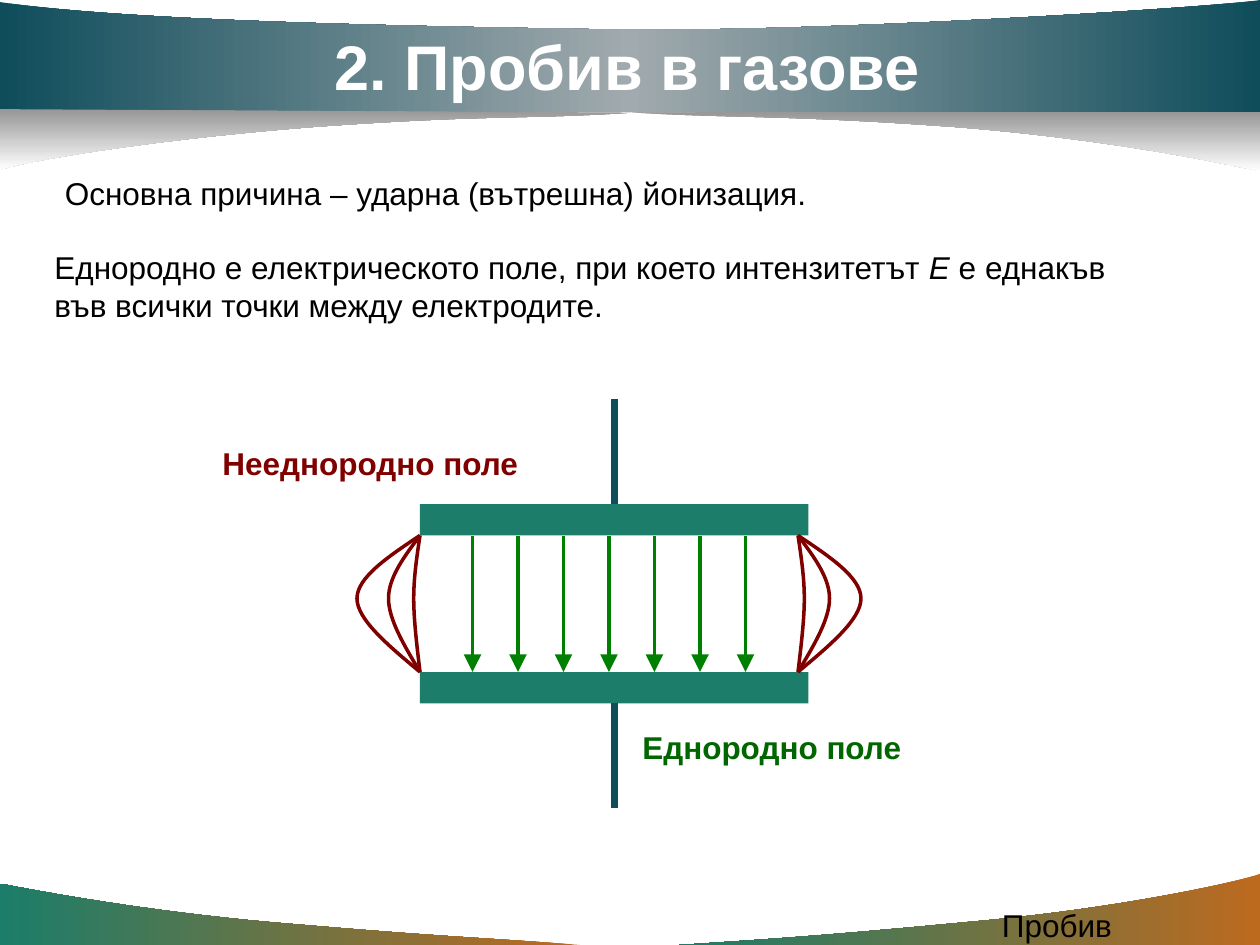
from copy import deepcopy
from dataclasses import dataclass

from lxml import etree
from pptx import Presentation, util as u
from pptx.dml.color import RGBColor
from pptx.enum import shapes as kinds
from pptx.oxml.ns import qn

# The slide is a grid of 120 columns by 90 rows, 12 cells to the inch
COLS, ROWS = 120, 90
CELL = u.Inches(1) // 12

TEAL, DEEP_TEAL, ORANGE = "1B7D6A", "0F4D5B", "BD6A1F"
FIELD_GREEN, LABEL_GREEN, EDGE_RED = "008000", "006600", "800000"

Point = tuple[float, float]


@dataclass
class Drape:
    """Area bounded by two Bezier pieces and straight closing sides."""
    start: Point
    controls: list[Point]
    sides: list[Point]
    stops: list[str]
    angle: int  # counter-clockwise


FOOT_COLOURS = [ORANGE, TEAL]
SHADE_COLOURS = ["969696", "FFFFFF"]
DRAPES = [
    # Bottom corners
    Drape((55.2, 90), [(46.1, 89.3), (43, 89.3), (27.8, 88), (12.7, 86.8), (0.1, 84.15), (0, 84.15)],
          [(0, 90)], FOOT_COLOURS, 180),
    Drape((64.7, 90), [(73.7, 89.4), (77.5, 89.2), (92.3, 87.8), (107, 86.5), (118.8, 83.8), (120, 83.2)],
          [(120, 90)], FOOT_COLOURS, 180),
    # Right shade, title band, left shade
    Drape((60, 10.7), [(70.1, 11.3), (74.4, 10.9), (91, 12.1), (107.6, 13.4), (119.8, 16.3), (120, 16.3)],
          [(120, 10.6)], SHADE_COLOURS, 270),
    Drape((120, 0), [(115.7, 0.7), (78.4, 3.1), (58.4, 2.8), (38.5, 2.5), (12.1, 2), (0, 0.2)],
          [(0, 10.7), (120, 10.7)], [DEEP_TEAL, "A1AAAE", DEEP_TEAL], 180),
    Drape((60, 10.75), [(49.9, 11.4), (46.6, 10.9), (29.9, 12.1), (13.2, 13.4), (1.3, 15.6), (0, 16.2)],
          [(0, 10.4)], SHADE_COLOURS, 270),
]


def cells(value: float) -> int:
    return u.Emu(round(value * CELL))


def colour(hex_code: str) -> RGBColor:
    return RGBColor.from_string(hex_code)


def add_outline(slide, start: Point, controls: list[Point], sides: list[Point], close: bool):
    """Freeform of cubic pieces (three controls each) followed by straight sides."""
    builder = slide.shapes.build_freeform(cells(start[0]), cells(start[1]))
    corners = controls[2::3] + sides
    builder.add_line_segments([(cells(x), cells(y)) for x, y in corners], close=close)
    outline = builder.convert_to_shape()
    outline.shadow.inherit = False
    # Turn the leading straight segments into cubic ones
    segments = list(outline._element.iter(qn("a:lnTo")))
    for i, segment in enumerate(segments[:len(controls) // 3]):
        curve = etree.Element(qn("a:cubicBezTo"))
        for x, y in controls[3 * i:3 * i + 3]:
            etree.SubElement(curve, qn("a:pt"), x=str(cells(x) - outline.left), y=str(cells(y) - outline.top))
        segment.getparent().replace(segment, curve)
    return outline


def add_drape(slide, drape: Drape) -> None:
    area = add_outline(slide, drape.start, drape.controls, drape.sides, True)
    area.line.fill.background()
    area.fill.gradient()
    area.fill.gradient_angle = drape.angle
    stop_list = next(area._element.iter(qn("a:gsLst")))
    while len(stop_list) < len(drape.stops):
        stop_list.append(deepcopy(stop_list[0]))
    for i, (stop, code) in enumerate(zip(area.fill.gradient_stops, drape.stops)):
        stop.color.rgb = colour(code)
        stop.position = i / (len(drape.stops) - 1)


def add_plate(slide, left: float, top: float, width: float, height: float) -> None:
    plate = slide.shapes.add_shape(kinds.MSO_SHAPE.RECTANGLE, *map(cells, (left, top, width, height)))
    plate.shadow.inherit = False
    plate.fill.solid()
    plate.fill.fore_color.rgb = colour(TEAL)
    plate.line.fill.background()


def add_line(slide, start: Point, end: Point, code: str, width: float, arrow: bool = False) -> None:
    line = slide.shapes.add_connector(kinds.MSO_CONNECTOR.STRAIGHT, *map(cells, (*start, *end)))
    line.line.color.rgb = colour(code)
    line.line.width = u.Pt(width)
    properties = line._element.spPr
    if arrow:
        etree.SubElement(properties.find(qn("a:ln")), qn("a:tailEnd"), type="triangle", w="lg", len="lg")
    etree.SubElement(properties, qn("a:effectLst"))


def add_edge_line(slide, x: float, top: float, bottom: float, bulge: float) -> None:
    """Curved field line that leaves the plate edge at x sideways by bulge."""
    half, full = x + bulge / 2, x + bulge
    controls = [(half, top + 2), (full, top + 4), (full, top + 6),
                (full, top + 8), (half, bottom - 2.5), (x, bottom)]
    curve = add_outline(slide, (x, top), controls, [], False)
    curve.fill.background()
    curve.line.color.rgb = colour(EDGE_RED)
    curve.line.width = u.Pt(2)


def add_text(slide, words: str, left: float, top: float, width: float, height: float, *,
             size: float = 18, code: str = "000000", bold: bool = False) -> None:
    """Text box; words between underscores are italic."""
    box = slide.shapes.add_textbox(*map(cells, (left, top, width, height)))
    box.text_frame.word_wrap = True
    paragraph = box.text_frame.paragraphs[0]
    for i, part in enumerate(words.split("_")):
        run = paragraph.add_run()
        run.text = part
        run.font.name = "Arial"
        run.font.size = u.Pt(size)
        run.font.bold = bold
        run.font.italic = i % 2 == 1
        run.font.color.rgb = colour(code)


def add_capacitor(slide) -> None:
    left, width, thickness = 40, 37, 3
    upper, lower = 48, 64
    gap_top, lead_x, lead = upper + thickness, 58.5, 10

    # Plates and their leads
    for plate_top, lead_start, lead_end in ((upper, upper, upper - lead),
                                            (lower, lower + thickness + lead, lower + thickness)):
        add_plate(slide, left, plate_top, width, thickness)
        add_line(slide, (lead_x, lead_start), (lead_x, lead_end), DEEP_TEAL, 4)

    # Uniform field
    for i in range(7):
        x = 45 + i * 13 / 3
        add_line(slide, (x, gap_top), (x, lower), FIELD_GREEN, 2, arrow=True)
    add_text(slide, "Еднородно поле", 60, 68.7, 27.4, 4.8, code=LABEL_GREEN, bold=True)

    # Non-uniform field at both edges
    for x, side in ((left, -1), (left + width - 1, 1)):
        for bulge in (3, 6, 0.6):
            add_edge_line(slide, x, gap_top, lower, side * bulge)
    add_text(slide, "Нееднородно поле", 20, 41.7, 30.9, 4.8, code=EDGE_RED, bold=True)


def main() -> None:
    deck = Presentation()
    deck.slide_width, deck.slide_height = cells(COLS), cells(ROWS)
    slide = deck.slides.add_slide(deck.slide_layouts[6])

    for drape in DRAPES:
        add_drape(slide, drape)

    # Footer, title and explanation
    add_text(slide, "Пробив", 94.25, 85.65, 25, 3)
    add_text(slide, "2. Пробив в газове", 30.7, 2.05, 58.6, 8.4, size=36, code="FFFFFF", bold=True)
    add_text(slide, "Еднородно е електрическото поле, при което интензитетът _Е_ е еднакъв "
             "във всички точки между електродите.", 4, 23.05, 106, 8.4)
    add_text(slide, "Основна причина – ударна (вътрешна) йонизация.", 5, 16, 73.6, 4.8)

    add_capacitor(slide)
    deck.save("out.pptx")


if __name__ == "__main__":
    main()
